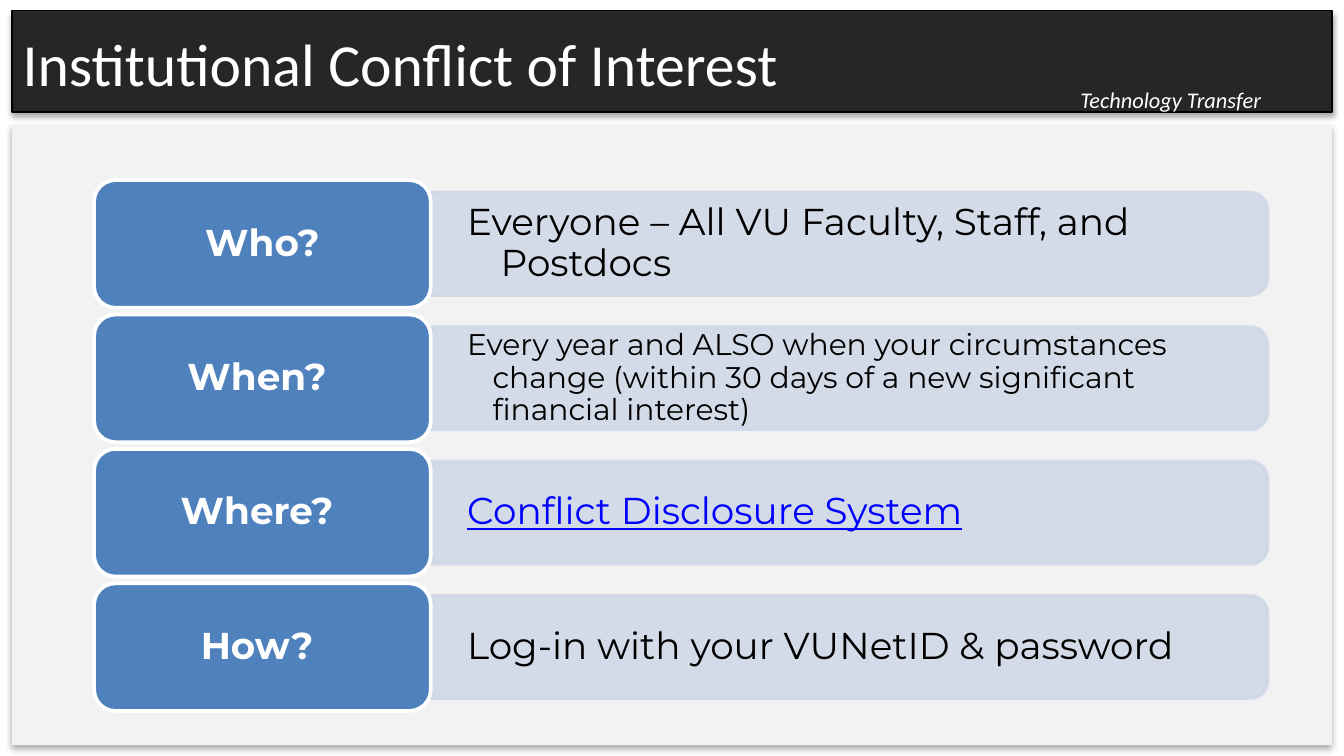
from dataclasses import dataclass

from pptx import Presentation
from pptx.dml.color import RGBColor
from pptx.enum.shapes import MSO_SHAPE
from pptx.enum.text import MSO_ANCHOR, PP_ALIGN
from pptx.oxml import parse_xml
from pptx.oxml.ns import nsdecls, qn
from pptx.util import Emu, Pt

PX = 4572
SLIDE_W, SLIDE_H = 2000, 1125
ROW_TOP, ROW_STEP = 268, 200
LABEL_H, BAR_W, BAR_H = 190, 1244, 152


@dataclass(frozen=True)
class Box:
    x: int
    y: int
    w: int
    h: int

    def emu(self) -> list[Emu]:
        return [Emu(v * PX) for v in (self.x, self.y, self.w, self.h)]


@dataclass(frozen=True)
class Style:
    size: int
    font: str = "Calibri"
    color: str = "FFFFFF"
    bold: bool = False
    italic: bool = False
    underline: bool = False


@dataclass(frozen=True)
class Row:
    label: str
    answer: str
    style: Style
    hang: int = 50


ANSWER = Style(20, "Montserrat", "000000")
LABEL = Style(20, "Montserrat", bold=True)
ROWS = [
    Row("Who?", "Everyone – All VU Faculty, Staff, and Postdocs", ANSWER),
    Row("When? ", "Every year and ALSO when your circumstances change "
        "(within 30 days of a new significant financial interest)",
        Style(16, "Montserrat", "000000"), 38),
    Row("Where? ", "Conflict Disclosure System",
        Style(20, "Montserrat", "0000FF", underline=True)),
    Row("How? ", "Log-in with your VUNetID & password", ANSWER),
]


def rgb(value: str) -> RGBColor:
    return RGBColor.from_string(value)


def add_block(s, kind, box: Box, fill: str, line: str = "", width: float = 0):
    sp = s.shapes.add_shape(kind, *box.emu())
    sp.shadow.inherit = False
    sp.fill.solid()
    sp.fill.fore_color.rgb = rgb(fill)
    if line:
        sp.line.color.rgb = rgb(line)
        sp.line.width = Pt(width)
    else:
        sp.line.fill.background()
    return sp


def add_shadow(sp) -> None:
    sp._element.spPr.find(qn("a:effectLst")).append(parse_xml(
        f'<a:outerShdw {nsdecls("a")} blurRad="{Pt(3.1)}" dist="{Pt(1.8)}" '
        'dir="5400000" rotWithShape="0"><a:srgbClr val="000000">'
        '<a:alpha val="35000"/></a:srgbClr></a:outerShdw>'))


def set_alpha(sp, percent: int) -> None:
    for color in sp._element.spPr.iter(qn("a:srgbClr")):
        color.append(parse_xml(
            f'<a:alpha {nsdecls("a")} val="{percent * 1000}"/>'))


def write(sp, text: str, style: Style, anchor=MSO_ANCHOR.MIDDLE,
          align=PP_ALIGN.LEFT, inset: tuple[int, int] = (20, 10),
          spacing: float = 1.0):
    tf = sp.text_frame
    tf.word_wrap = True
    tf.vertical_anchor = anchor
    tf.margin_left = tf.margin_right = Emu(inset[0] * PX)
    tf.margin_top = tf.margin_bottom = Emu(inset[1] * PX)
    p = tf.paragraphs[0]
    p.text = text
    p.alignment = align
    p.line_spacing = spacing
    font = p.runs[0].font
    font.name = style.font
    font.size = Pt(style.size)
    font.color.rgb = rgb(style.color)
    font.bold = style.bold
    font.italic = style.italic
    font.underline = style.underline
    return p


def draw_frame(s) -> None:
    for box, fill, line in [
        (Box(0, 0, SLIDE_W, SLIDE_H), "FFFFFF", ""),
        (Box(18, 187, 1964, 922), "F2F2F2", ""),
        (Box(18, 16, 1964, 151), "262626", "000000"),
    ]:
        add_shadow(add_block(s, MSO_SHAPE.RECTANGLE, box, fill, line, 0.75))
    unit = s.shapes.add_textbox(*Box(1588, 118, 332, 62).emu())
    write(unit, "Technology Transfer", Style(12, italic=True), MSO_ANCHOR.TOP)
    title = s.shapes.add_textbox(*Box(14, 0, 1294, 187).emu())
    write(title, "Institutional Conflict of Interest", Style(32))


def draw_row(s, row: Row, top: int) -> None:
    middle = top + LABEL_H // 2
    bar = add_block(s, MSO_SHAPE.ROUND_2_SAME_RECTANGLE,
                    Box(1188, middle - BAR_W // 2, BAR_H, BAR_W),
                    "D0D8E8", "D0D8E8", 2)
    bar.rotation = 90
    set_alpha(bar, 90)
    answer = s.shapes.add_textbox(*Box(641, top + 26, 1238, 138).emu())
    p = write(answer, row.answer, row.style, inset=(54, 28), spacing=0.9)
    pPr = p._p.get_or_add_pPr()
    pPr.set("marL", str(row.hang * PX))
    pPr.set("indent", str(-row.hang * PX))
    label = add_block(s, MSO_SHAPE.ROUNDED_RECTANGLE,
                      Box(140, top, 501, LABEL_H), "4F81BD", "FFFFFF", 2)
    write(label, row.label, LABEL, align=PP_ALIGN.CENTER, inset=(16, 8),
          spacing=0.9)


def main() -> None:
    prs = Presentation()
    prs.slide_width, prs.slide_height = Emu(SLIDE_W * PX), Emu(SLIDE_H * PX)
    s = prs.slides.add_slide(prs.slide_layouts[6])
    draw_frame(s)
    for i, row in enumerate(ROWS):
        draw_row(s, row, ROW_TOP + i * ROW_STEP)
    prs.save("out.pptx")


if __name__ == "__main__":
    main()
